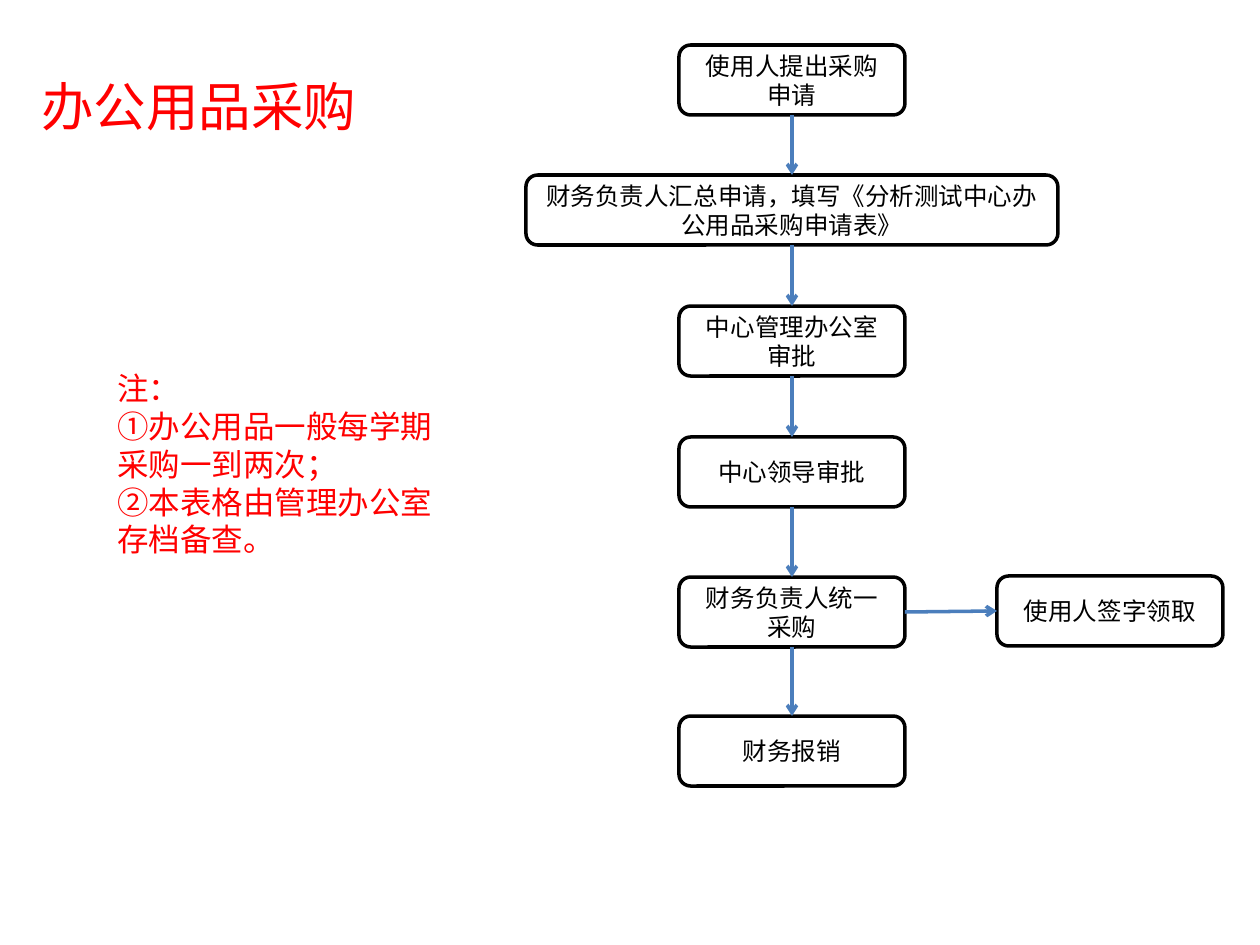
from lxml.etree import SubElement
from pptx import Presentation
from pptx.dml.color import RGBColor
from pptx.enum.shapes import MSO_CONNECTOR, MSO_SHAPE
from pptx.enum.text import MSO_ANCHOR, MSO_AUTO_SIZE, PP_ALIGN
from pptx.oxml.ns import qn
from pptx.util import Pt

PX = 914400 / 126
RED = RGBColor(0xFF, 0x00, 0x00)
BLACK = RGBColor(0x00, 0x00, 0x00)
BLUE = RGBColor(0x4B, 0x7E, 0xBC)
TOP, LEFT, BOTTOM, RIGHT = range(4)

BOX_W, BOX_H = 226, 70
WIDE_W = 532
STEPS = [  # top within the flow, width, text
    (0, BOX_W, "使用人提出采购申请"),
    (130, WIDE_W, "财务负责人汇总申请，填写《分析测试中心办公用品采购申请表》"),
    (261, BOX_W, "中心管理办公室审批"),
    (392, BOX_W, "中心领导审批"),
    (532, BOX_W, "财务负责人统一采购"),
    (671, BOX_W, "财务报销"),
]
BUYING = 4
PICKUP = (531, "使用人签字领取")
NOTES = ["注：", "①办公用品一般每学期采购一到两次；", "②本表格由管理办公室存档备查。"]


def emu(*lengths):
    return [round(n * PX) for n in lengths]


def write(tf, *lines, size, color, font="Calibri", align=None, anchor=None):
    tf.word_wrap = True
    tf.vertical_anchor = anchor
    for i, line in enumerate(lines):
        p = tf.add_paragraph() if i else tf.paragraphs[0]
        p.alignment = align
        r = p.add_run()
        r.text = line
        r.font.size = Pt(size)
        r.font.name = font
        r.font.color.rgb = color


def add_title(slide, x, y, w, h):
    sp = slide.shapes.title
    sp.left, sp.top, sp.width, sp.height = emu(x, y, w, h)
    write(sp.text_frame, "办公用品采购", size=30, color=RED, font="Noto Sans CJK JP",
          align=PP_ALIGN.CENTER, anchor=MSO_ANCHOR.MIDDLE)


def add_notes(slide, x, y, w, h):
    tf = slide.shapes.add_textbox(*emu(x, y, w, h)).text_frame
    write(tf, *NOTES, size=18, color=RED)
    tf.auto_size = MSO_AUTO_SIZE.SHAPE_TO_FIT_TEXT


def add_step(slide, x, y, w, text):
    sp = slide.shapes.add_shape(MSO_SHAPE.ROUNDED_RECTANGLE, *emu(x, y, w, BOX_H))
    sp.shadow.inherit = False
    sp.fill.background()
    sp.line.color.rgb = BLACK
    sp.line.width = Pt(2)
    write(sp.text_frame, text, size=14, color=BLACK,
          align=PP_ALIGN.CENTER, anchor=MSO_ANCHOR.MIDDLE)
    return sp


def add_arrow(slide, start, start_side, end, end_side):
    cxn = slide.shapes.add_connector(MSO_CONNECTOR.STRAIGHT, 0, 0, 0, 0)
    cxn.begin_connect(start, start_side)
    cxn.end_connect(end, end_side)
    cxn.line.color.rgb = BLUE
    cxn.line.width = Pt(2)
    SubElement(cxn.line._get_or_add_ln(), qn("a:tailEnd"), type="arrow")
    SubElement(cxn._element.spPr, qn("a:effectLst"))


def add_flow(slide, x, y, w):
    """Centre the steps in the wide column; the pickup step ends at its right."""
    steps = [add_step(slide, x + (WIDE_W - step_w) // 2, y + top, step_w, text)
             for top, step_w, text in STEPS]
    top, text = PICKUP
    pickup = add_step(slide, x + w - BOX_W, y + top, BOX_W, text)
    for upper, lower in zip(steps, steps[1:]):
        add_arrow(slide, upper, BOTTOM, lower, TOP)
    add_arrow(slide, steps[BUYING], RIGHT, pickup, LEFT)


def main():
    prs = Presentation()
    prs.slide_width, prs.slide_height = emu(1260, 945)
    slide = prs.slides.add_slide(prs.slide_layouts[5])
    add_title(slide, 25, 56, 348, 100)
    add_flow(slide, 526, 45, 697)
    add_notes(slide, 105, 363, 367, 204)
    prs.save("out.pptx")


if __name__ == "__main__":
    main()
